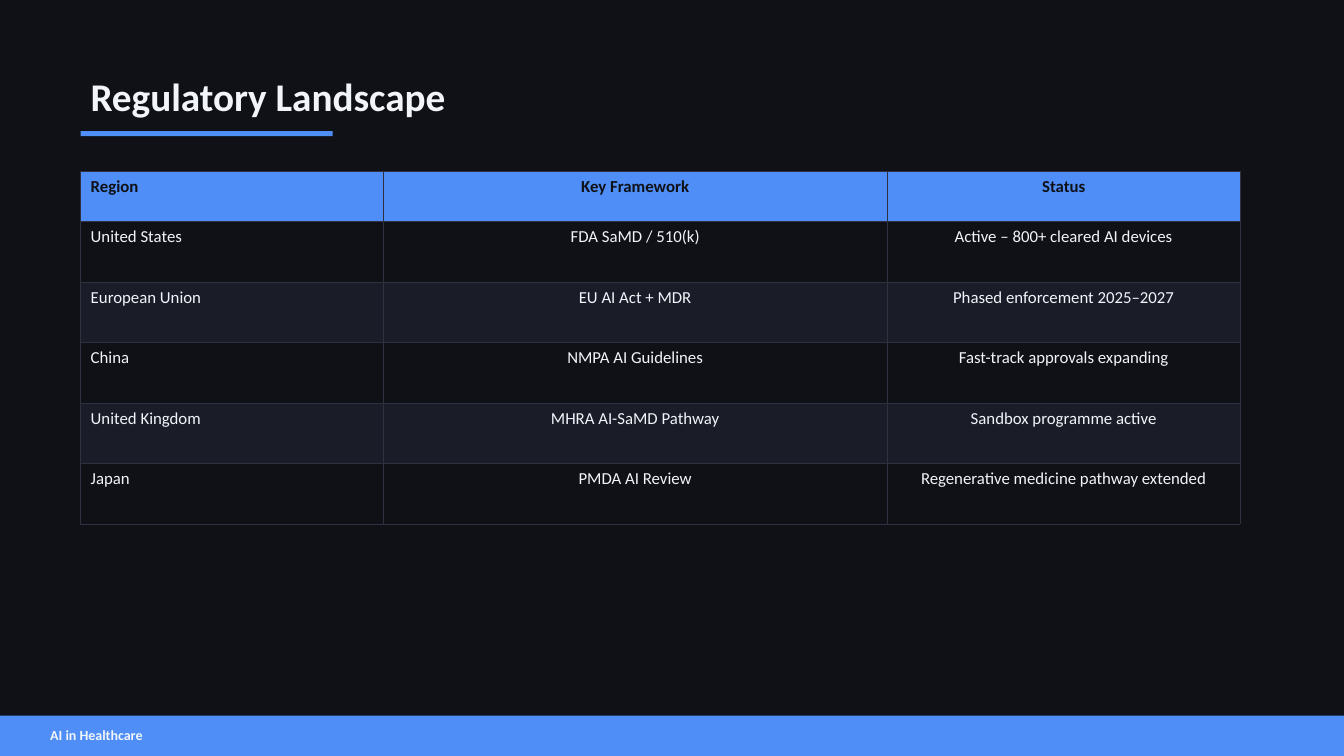
from lxml import etree
from pptx import Presentation, util as u
from pptx.dml.color import RGBColor
from pptx.enum import shapes, text
from pptx.oxml import ns

PX = 9144  # EMU per px, 100 px to the inch
COLORS = {
    "background": "0F1117",
    "stripe": "1A1D27",
    "accent": "4F8EF7",
    "light": "F1F5F9",
    "border": "2D3140",
}
FRAMEWORKS = [
    ("Region", "Key Framework", "Status"),
    ("United States", "FDA SaMD / 510(k)", "Active – 800+ cleared AI devices"),
    ("European Union", "EU AI Act + MDR", "Phased enforcement 2025–2027"),
    ("China", "NMPA AI Guidelines", "Fast-track approvals expanding"),
    ("United Kingdom", "MHRA AI-SaMD Pathway", "Sandbox programme active"),
    ("Japan", "PMDA AI Review", "Regenerative medicine pathway extended"),
]


def rgb(name):
    return RGBColor.from_string(COLORS[name])


class SlideBuilder:
    def __init__(self, slide, font="Calibri"):
        self.slide = slide
        self.font = font
        self.paint(slide.background.fill, "background")

    def paint(self, fill, color):
        fill.solid()
        fill.fore_color.rgb = rgb(color)

    def set_text(self, para, words, size, color, bold):
        para.text = words
        para.font.name = self.font
        para.font.size = u.Pt(size)
        para.font.bold = bold
        para.font.color.rgb = rgb(color)

    def label(self, words, place, size):
        box = self.slide.shapes.add_textbox(*(n * PX for n in place))
        frame = box.text_frame
        frame.word_wrap = True
        frame.vertical_anchor = text.MSO_ANCHOR.MIDDLE
        self.set_text(frame.paragraphs[0], words, size, "light", True)

    def bar(self, place):
        box = self.slide.shapes.add_shape(
            shapes.MSO_SHAPE.RECTANGLE, *(n * PX for n in place))
        box.shadow.inherit = False
        self.paint(box.fill, "accent")
        box.line.fill.background()

    def outline(self, cell):
        properties = cell._tc.get_or_add_tcPr()
        for side in ("lnL", "lnR", "lnT", "lnB"):
            line = etree.SubElement(properties, ns.qn(f"a:{side}"), w=str(u.Pt(0.5)))
            fill = etree.SubElement(line, ns.qn("a:solidFill"))
            etree.SubElement(fill, ns.qn("a:srgbClr"), val=COLORS["border"])

    def table(self, rows, left, top, widths, heights):
        table = self.slide.shapes.add_table(
            len(rows), len(widths), left * PX, top * PX,
            sum(widths) * PX, sum(heights) * PX).table
        for column, width in zip(table.columns, widths):
            column.width = width * PX
        for r, (row, height) in enumerate(zip(rows, heights)):
            table.rows[r].height = height * PX
            header = r == 0
            fill = "accent" if header else "background" if r % 2 else "stripe"
            for c, words in enumerate(row):
                cell = table.cell(r, c)
                self.outline(cell)
                self.paint(cell.fill, fill)
                para = cell.text_frame.paragraphs[0]
                self.set_text(para, words, 12, "background" if header else "light", header)
                if c:
                    para.alignment = text.PP_ALIGN.CENTER


def main():
    deck = Presentation()
    deck.slide_width, deck.slide_height = 1333 * PX, 750 * PX
    page = SlideBuilder(deck.slides.add_slide(deck.slide_layouts[6]))

    # Title and underline
    page.label("Regulatory Landscape", (80, 50, 1000, 90), 28)
    page.bar((80, 130, 250, 5))

    # Frameworks by region
    page.table(FRAMEWORKS, 80, 170, [300, 500, 350], [50] + [60] * 5)

    # Footer
    page.bar((0, 710, 1333, 40))
    page.label("AI in Healthcare", (40, 712, 600, 35), 10)

    deck.save("out.pptx")


if __name__ == "__main__":
    main()
